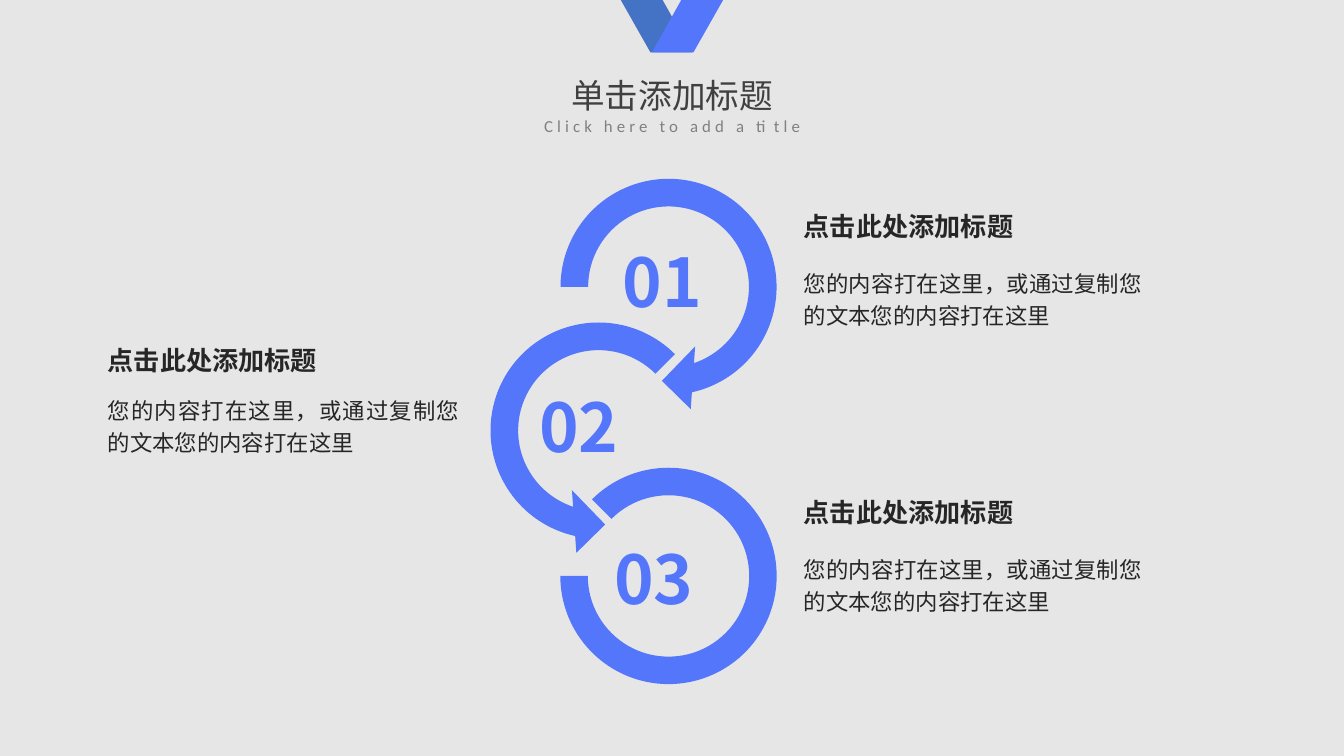
from lxml.etree import SubElement
from pptx import Presentation
from pptx.dml.color import RGBColor
from pptx.enum.shapes import MSO_SHAPE as Preset
from pptx.enum.text import MSO_ANCHOR as Anchor, MSO_AUTO_SIZE as AutoSize, PP_ALIGN as Align
from pptx.oxml.ns import qn
from pptx.util import Pt

COLORS = {
    "background": "E7E6E6",
    "accent": "5376FB",
    "fold": "4472C4",
    "title": "404040",
    "subtitle": "808080",
    "text": "262626",
}
CJK_FONT = "Noto Sans CJK SC"
HEADING = "点击此处添加标题"
BODY = "您的内容打在这里，或通过复制您的文本您的内容打在这里"

# Preset, left, top, size, adjustments
ARCS = [
    (Preset.CIRCULAR_ARROW, 290.9, 86.4, 134.6, (0.11, 11.423, 45, 108, 0.125)),
    (Preset.LEFT_CIRCULAR_ARROW, 253.4, 163.4, 134.6, (0.11, 11.423, 63, 189, 0.125)),
    (Preset.BLOCK_ARC, 300.2, 250.6, 115.9, (135, 108, 0.127)),
]
# Number, left, top
NUMBERS = [("01", 328.3, 126), ("02", 283.7, 203.8), ("03", 324, 285.1)]
# Left, heading top, body top, body width
CAPTIONS = [
    (425.5, 106.6, 139, 191.5),
    (425.5, 259.9, 292.3, 191.5),
    (52.6, 178.6, 207.4, 198.7),
]
RIBBONS = [
    ("fold", [(332.6, 0), (355, 0), (370.8, 28.1), (348.5, 28.1)]),
    ("accent", [(349.2, 28.1), (371.5, 28.1), (387.4, 0), (365, 0)]),
]


def color(name):
    return RGBColor.from_string(COLORS[name])


def place(shape, left, top, width, height):
    shape.left, shape.top, shape.width, shape.height = map(Pt, (left, top, width, height))


def paint(shape, fill):
    """Give a flat fill with neither outline nor shadow."""
    shape.fill.solid()
    shape.fill.fore_color.rgb = color(fill)
    shape.line.fill.background()
    shape.shadow.inherit = False


def style(paragraph, size, ink, font=CJK_FONT, bold=False, align=Align.LEFT):
    paragraph.alignment = align
    paragraph.font.size = Pt(size)
    paragraph.font.bold = bold
    paragraph.font.color.rgb = color(ink)
    paragraph.font.name = font
    properties = paragraph._p.get_or_add_pPr().get_or_add_defRPr()
    SubElement(properties, qn("a:ea")).set("typeface", font)
    return properties


def add_title(slide):
    title = slide.shapes.title
    place(title, 225, 36.7, 270, 40.3)
    frame = title.text_frame
    frame.text = "单击添加标题\nClick here to add a title"
    frame.vertical_anchor = Anchor.TOP
    frame.auto_size = AutoSize.NONE
    heading, subtitle = frame.paragraphs
    style(heading, 18, "title", align=Align.CENTER)
    properties = style(subtitle, 9, "subtitle", "Calibri", align=Align.CENTER)
    properties.set("spc", "220")


def add_ribbon(slide):
    group = slide.shapes.add_group_shape()
    for fill, points in RIBBONS:
        start, *rest = [(Pt(x), Pt(y)) for x, y in points]
        builder = group.shapes.build_freeform(*start)
        builder.add_line_segments(rest)
        paint(builder.convert_to_shape(), fill)


def add_arc(slide, preset, left, top, size, adjustments):
    arc = slide.shapes.add_shape(preset, Pt(left), Pt(top), Pt(size), Pt(size))
    for index, value in enumerate(adjustments):
        arc.adjustments[index] = value
    paint(arc, "accent")


def add_text(slide, text, left, top, width, height):
    box = slide.shapes.add_textbox(Pt(left), Pt(top), Pt(width), Pt(height))
    frame = box.text_frame
    frame.word_wrap = True
    frame.margin_left = frame.margin_right = Pt(5.1)
    frame.margin_top = frame.margin_bottom = Pt(2.6)
    frame.text = text
    return frame.paragraphs[0]


def add_caption(slide, left, heading_top, body_top, body_width):
    heading = add_text(slide, HEADING, left, heading_top, 159.1, 23.8)
    style(heading, 14, "text", bold=True, align=Align.JUSTIFY)
    body = add_text(slide, BODY, left, body_top, body_width, 40.3)
    style(body, 12, "text", align=Align.JUSTIFY)
    heading.line_spacing = body.line_spacing = 1.2


def main():
    presentation = Presentation()
    presentation.slide_width, presentation.slide_height = Pt(720), Pt(405)
    slide = presentation.slides.add_slide(presentation.slide_layouts[5])
    slide.background.fill.solid()
    slide.background.fill.fore_color.rgb = color("background")

    add_title(slide)
    add_ribbon(slide)
    for arc in ARCS:
        add_arc(slide, *arc)
    for number, left, top in NUMBERS:
        style(add_text(slide, number, left, top, 78.5, 49), 36, "accent", bold=True)
    for caption in CAPTIONS:
        add_caption(slide, *caption)
    presentation.save("out.pptx")


if __name__ == "__main__":
    main()
